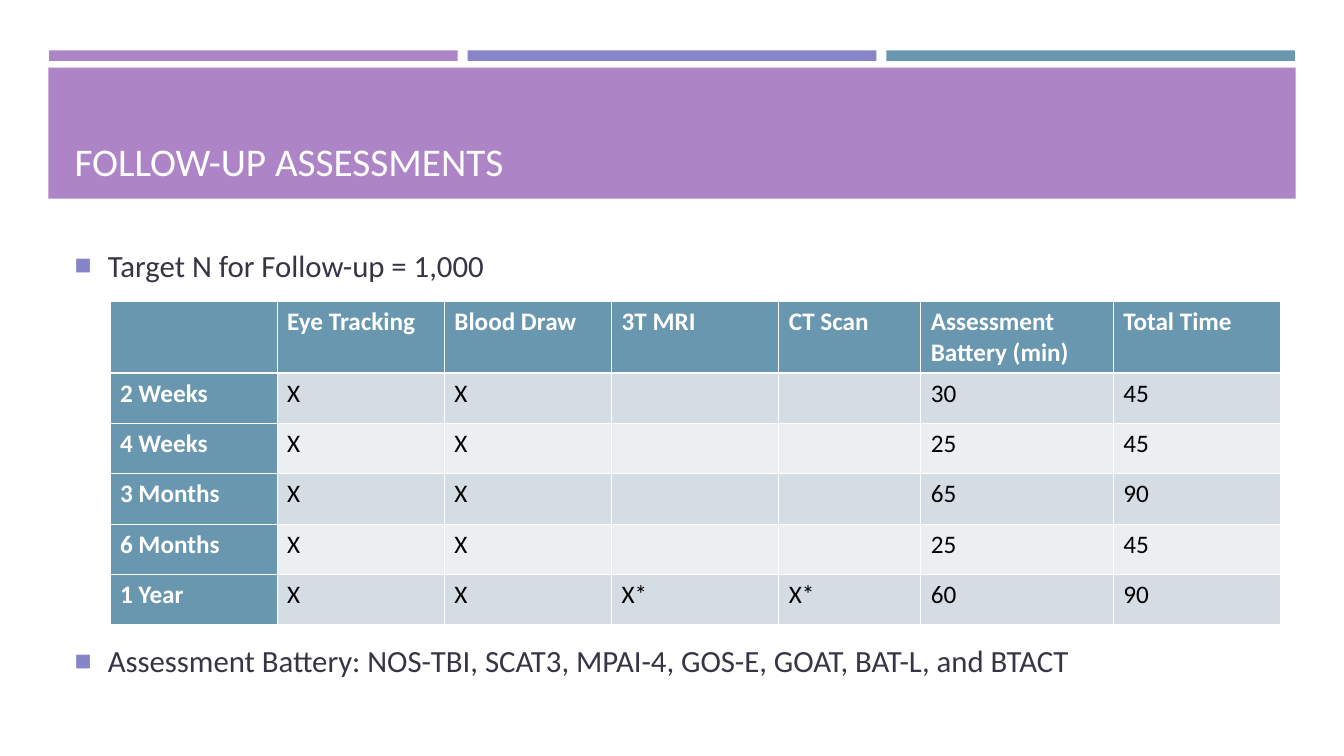
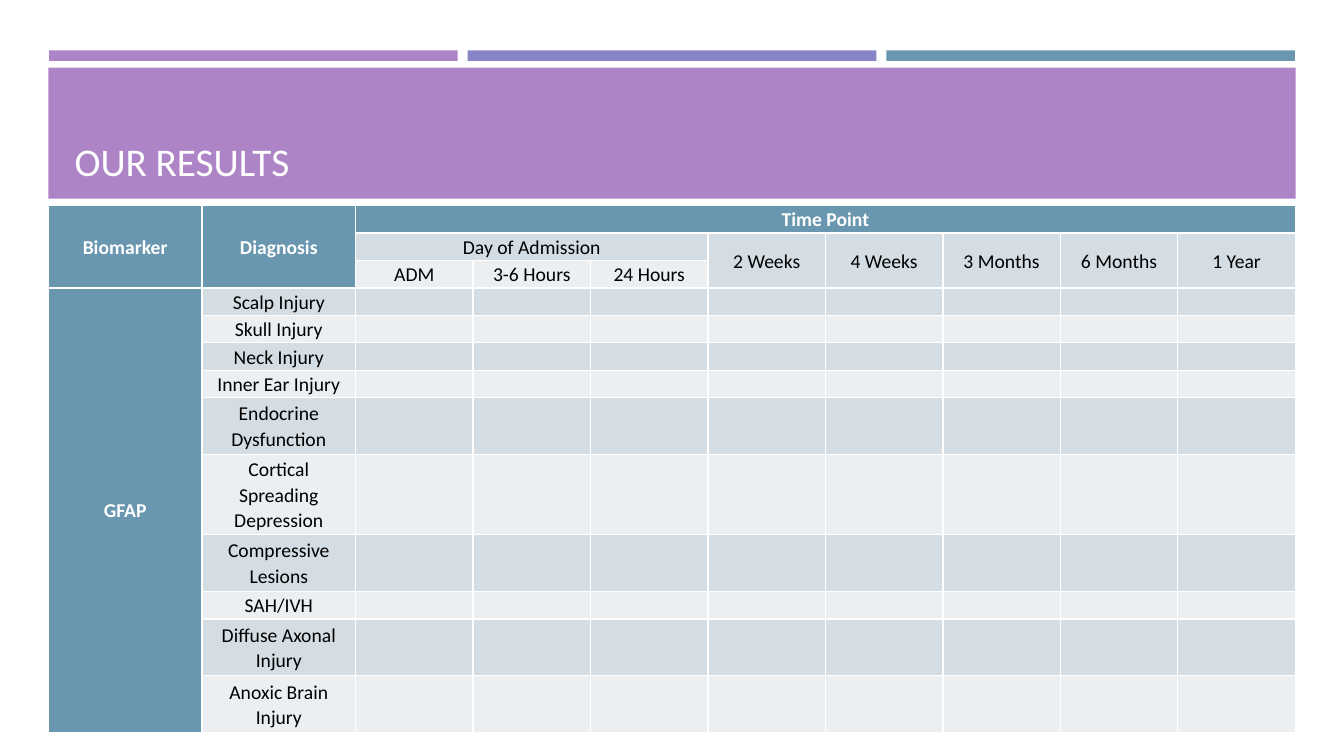
"""Build two slides on follow-up assessments and biomarker results."""
from lxml import etree
from pptx import Presentation
from pptx.dml.color import RGBColor
from pptx.enum.shapes import MSO_SHAPE
from pptx.enum.text import MSO_ANCHOR, MSO_AUTO_SIZE, PP_ALIGN
from pptx.oxml.ns import qn
from pptx.util import Inches, Pt

PURPLE = RGBColor(0xAD, 0x84, 0xC6)
VIOLET = RGBColor(0x87, 0x84, 0xC7)
TEAL = RGBColor(0x69, 0x97, 0xAF)
BAND_DARK = RGBColor(0xD4, 0xDD, 0xE3)
BAND_LIGHT = RGBColor(0xEB, 0xEF, 0xF2)
INK = RGBColor(0x37, 0x35, 0x45)
WHITE = RGBColor(0xFF, 0xFF, 0xFF)
BLACK = RGBColor(0, 0, 0)
FONT = "Calibri"

deck = Presentation()
deck.slide_width, deck.slide_height = Inches(13.33), Inches(7.5)


def box(left, top, width, height):
    """Turn percentages of the slide into left, top, width and height."""
    across, down = deck.slide_width / 100, deck.slide_height / 100
    return int(left * across), int(top * down), int(width * across), int(height * down)


def add_grid(slide, place, column_shares, row_shares, texts, size):
    """Add a table with a teal header row and column and banded body rows."""
    frame = slide.shapes.add_table(len(row_shares), len(column_shares), *place)
    grid = frame.table
    grid.first_col = True
    for column, share in zip(grid.columns, column_shares):
        column.width = int(place[2] * share / sum(column_shares))
    for row, share in zip(grid.rows, row_shares):
        row.height = int(place[3] * share / sum(row_shares))
    for r, row in enumerate(grid.rows):
        for c, cell in enumerate(row.cells):
            heading = r == 0 or c == 0
            cell.fill.solid()
            cell.fill.fore_color.rgb = TEAL if heading else BAND_DARK if r % 2 else BAND_LIGHT
            if r < len(texts) and c < len(texts[r]):
                cell.text = texts[r][c]
            font = cell.text_frame.paragraphs[0].font
            font.name, font.size, font.bold = FONT, Pt(size), heading
            font.color.rgb = WHITE if heading else BLACK
    return grid


master = deck.slide_master
title_frame = master.placeholders[0]
title_frame.left, title_frame.top, title_frame.width, title_frame.height = box(4.8, 10.27, 90.4, 14.8)
title_frame.text_frame.vertical_anchor = MSO_ANCHOR.BOTTOM
title_frame.text_frame.auto_size = MSO_AUTO_SIZE.NONE

follow_up = deck.slides.add_slide(deck.slide_layouts[1])
results = deck.slides.add_slide(deck.slide_layouts[5])

STRIP, GAP = 30.4, 0.75
bands = [(box(3.65 + i * (STRIP + GAP), 6.67, STRIP, 1.4), color)
         for i, color in enumerate((PURPLE, VIOLET, TEAL))]
bands.append((box(3.6, 8.95, 92.8, 17.33), PURPLE))
for place, color in bands:
    band = follow_up.shapes.add_shape(MSO_SHAPE.RECTANGLE, *place)
    band.shadow.inherit = False
    band.fill.solid()
    band.fill.fore_color.rgb = color
    band.line.fill.background()
    title_frame.element.addprevious(band.element)

for slide, heading in ((follow_up, "FOLLOW-UP ASSESSMENTS"), (results, "OUR RESULTS")):
    slide.shapes.title.text = heading
    title = slide.shapes.title.text_frame.paragraphs[0]
    title.alignment = PP_ALIGN.LEFT
    title.font.name, title.font.size = FONT, Pt(28)
    title.font.color.rgb = WHITE

notes = follow_up.placeholders[1]
notes.left, notes.top, notes.width, notes.height = box(4.8, 28.93, 90.4, 64.53)
notes.text_frame.vertical_anchor = MSO_ANCHOR.MIDDLE
notes.text_frame.text = (
    "Target N for Follow-up = 1,000\n"
    "Assessment Battery: NOS-TBI, SCAT3, MPAI-4, GOS-E, GOAT, BAT-L, and BTACT"
)
for point, space in zip(notes.text_frame.paragraphs, (0, 256)):
    point.space_before = Pt(space)
    properties = point._p.get_or_add_pPr()
    properties.set("marL", str(Inches(0.33)))
    properties.set("indent", str(-Inches(0.33)))
    bullet_color = etree.SubElement(properties, qn("a:buClr"))
    etree.SubElement(bullet_color, qn("a:srgbClr"), val=str(VIOLET))
    etree.SubElement(properties, qn("a:buSzPct"), val="92000")
    etree.SubElement(properties, qn("a:buChar"), char="■")
    point.font.name, point.font.size = FONT, Pt(22)
    point.font.color.rgb = INK

schedule = [
    ["", "Eye Tracking", "Blood Draw", "3T MRI", "CT Scan", "Assessment Battery (min)", "Total Time"],
    ["2 Weeks", "X", "X", "", "", "30", "45"],
    ["4 Weeks", "X", "X", "", "", "25", "45"],
    ["3 Months", "X", "X", "", "", "65", "90"],
    ["6 Months", "X", "X", "", "", "25", "45"],
    ["1 Year", "X", "X", "X*", "X*", "60", "90"],
]
add_grid(follow_up, box(8.18, 39.87, 87.1, 42.8),
         [166] * 4 + [141, 191, 166], [71] + [50] * 5, schedule, 18)

diagnoses = [
    "Scalp Injury", "Skull Injury", "Neck Injury", "Inner Ear Injury",
    "Endocrine Dysfunction", "Cortical Spreading Depression", "Compressive Lesions",
    "SAH/IVH", "Diffuse Axonal Injury", "Anoxic Brain Injury",
]
biomarkers = [
    ["Biomarker", "Diagnosis", "Time Point"],
    ["", "", "Day of Admission", "", "", "2 Weeks", "4 Weeks", "3 Months", "6 Months", "1 Year"],
    ["", "", "ADM", "3-6 Hours", "24 Hours"],
] + [["" if i else "GFAP", diagnosis] for i, diagnosis in enumerate(diagnoses)]
outcomes = add_grid(results, box(3.6, 27.2, 92.8, 69.75), [153] * 2 + [117] * 8,
                    [27] * 7 + [56, 79, 56, 27, 56, 56], biomarkers, 14)
for cell in outcomes.iter_cells():
    cell.vertical_anchor = MSO_ANCHOR.MIDDLE
    cell.margin_left = cell.margin_right = Inches(0.07)
    cell.margin_top = cell.margin_bottom = 0
    entry = cell.text_frame.paragraphs[0]
    entry.alignment = PP_ALIGN.CENTER
    entry.line_spacing = 1.07

spans = [(0, 0, 2, 0), (0, 1, 2, 1), (0, 2, 0, 9), (1, 2, 1, 4), (3, 0, 12, 0)]
spans += [(1, c, 2, c) for c in range(5, 10)]
for top, left, bottom, right in spans:
    outcomes.cell(top, left).merge(outcomes.cell(bottom, right))

deck.save("out.pptx")
